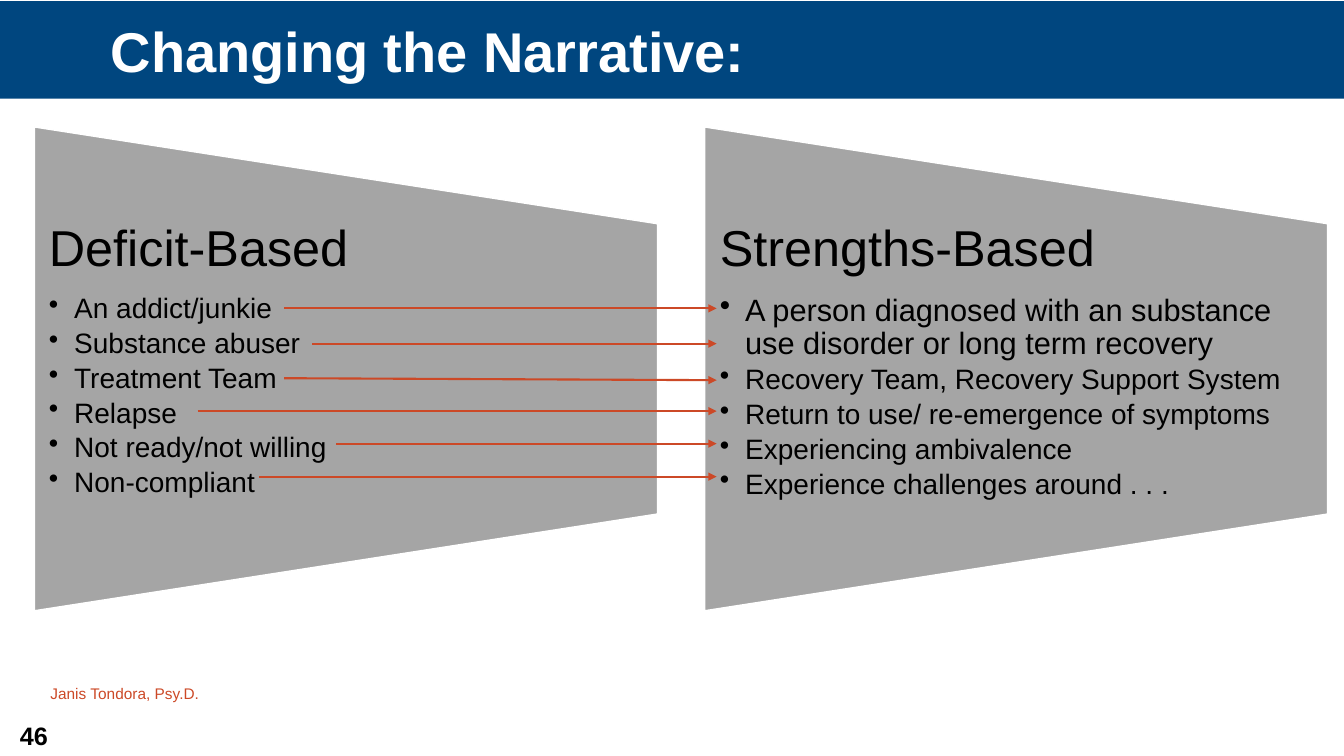
from dataclasses import dataclass

from lxml import etree
from pptx import Presentation
from pptx.dml.color import RGBColor
from pptx.enum.shapes import MSO_CONNECTOR as Connector, MSO_SHAPE as Shape
from pptx.enum.text import MSO_ANCHOR as Anchor, PP_ALIGN as Align
from pptx.oxml.ns import qn
from pptx.util import Cm, Pt


@dataclass(frozen=True)
class Theme:
    font: str = "Arial"
    band: RGBColor = RGBColor(0x00, 0x46, 0x7F)
    panel: RGBColor = RGBColor(0xA5, 0xA5, 0xA5)
    accent: RGBColor = RGBColor(0xCC, 0x49, 0x27)
    white: RGBColor = RGBColor(0xFF, 0xFF, 0xFF)
    black: RGBColor = RGBColor(0x00, 0x00, 0x00)
    title: int = 40
    heading: int = 36
    lead: int = 22
    item: int = 20
    number: int = 18
    credit: int = 11


theme = Theme()


def add_text_box(page, left, top, width, height, inset=0.25, inset_top=0.13):
    box = page.shapes.add_textbox(Cm(left), Cm(top), Cm(width), Cm(height))
    frame = box.text_frame
    frame.word_wrap = True
    frame.margin_left = frame.margin_right = Cm(inset)
    frame.margin_top = frame.margin_bottom = Cm(inset_top)
    return frame


def add_span(para, text, size, color, bold=False):
    span = para.add_run()
    span.text = text
    span.font.name = theme.font
    span.font.size = Pt(size)
    span.font.bold = bold
    span.font.color.rgb = color


deck = Presentation()
deck.slide_width = Cm(33.87)
deck.slide_height = Cm(19.05)
page = deck.slides.add_slide(deck.slide_layouts[6])

number = add_text_box(page, 0.25, 18.01, 1.37, 1.02)
add_span(number.paragraphs[0], "46", theme.number, theme.black, bold=True)

band = page.shapes.add_shape(Shape.RECTANGLE, Cm(0), Cm(0.03), Cm(34.04), Cm(2.46))
band.shadow.inherit = False
band.fill.solid()
band.fill.fore_color.rgb = theme.band
band.line.fill.background()
title = band.text_frame
title.margin_left = Cm(2.79)
title.vertical_anchor = Anchor.MIDDLE
title.paragraphs[0].alignment = Align.LEFT
add_span(title.paragraphs[0], "Changing the Narrative:", theme.title, theme.white, bold=True)

panels = [
    (0.87, 0.36, "Deficit-Based", [
        ("An addict/junkie", theme.item),
        ("Substance abuser", theme.item),
        ("Treatment Team", theme.item),
        ("Relapse", theme.item),
        ("Not ready/not willing", theme.item),
        ("Non-compliant", theme.item),
    ]),
    (17.76, 0.38, "Strengths-Based", [
        ("A person diagnosed with an substance use disorder or long term recovery", theme.lead),
        ("Recovery Team, Recovery Support System", theme.item),
        ("Return to use/ re-emergence of symptoms", theme.item),
        ("Experiencing ambivalence", theme.item),
        ("Experience challenges around . . .", theme.item),
    ]),
]
panel_top, panel_width, panel_height = 3.2, 15.7, 12.19
turn_shift = (panel_width - panel_height) / 2

for left, inset, heading, items in panels:
    panel = page.shapes.add_shape(
        Shape.FLOWCHART_MANUAL_OPERATION,
        Cm(left + turn_shift), Cm(panel_top - turn_shift),
        Cm(panel_height), Cm(panel_width),
    )
    panel.rotation = 270
    panel.shadow.inherit = False
    panel.fill.solid()
    panel.fill.fore_color.rgb = theme.panel
    panel.line.color.rgb = theme.white
    panel.line.width = Pt(1)

    frame = add_text_box(page, left, 5.61, panel_width, 7.32, inset, 0)
    para = frame.paragraphs[0]
    para.line_spacing = 0.9
    para.space_after = Pt(12.6)
    add_span(para, heading, theme.heading, theme.black)
    for text, size in items:
        para = frame.add_paragraph()
        para.level = 1
        para.line_spacing = 0.9
        para.space_after = Pt(3.2)
        properties = para._p.get_or_add_pPr()
        properties.set("marL", str(Cm(0.64)))
        properties.set("indent", str(-Cm(0.64)))
        etree.SubElement(properties, qn("a:buChar")).set("char", "•")
        add_span(para, text, size, theme.black)

arrow_end = 18.06
arrows = [
    (7.16, 7.77, 7.77),
    (7.87, 8.66, 8.66),
    (7.16, 9.53, 9.58),
    (4.98, 10.36, 10.36),
    (8.48, 11.18, 11.18),
    (6.53, 12.01, 12.01),
]
for start, start_y, end_y in arrows:
    arrow = page.shapes.add_connector(
        Connector.STRAIGHT, Cm(start), Cm(start_y), Cm(arrow_end), Cm(end_y)
    )
    arrow.line.color.rgb = theme.accent
    arrow.line.width = Pt(1.5)
    etree.SubElement(arrow.line._get_or_add_ln(), qn("a:tailEnd")).set("type", "triangle")
    etree.SubElement(arrow._element.spPr, qn("a:effectLst"))

credit = add_text_box(page, 1.02, 17.12, 6.15, 0.74)
add_span(credit.paragraphs[0], "Janis Tondora, Psy.D.", theme.credit, theme.accent)

deck.save("out.pptx")
